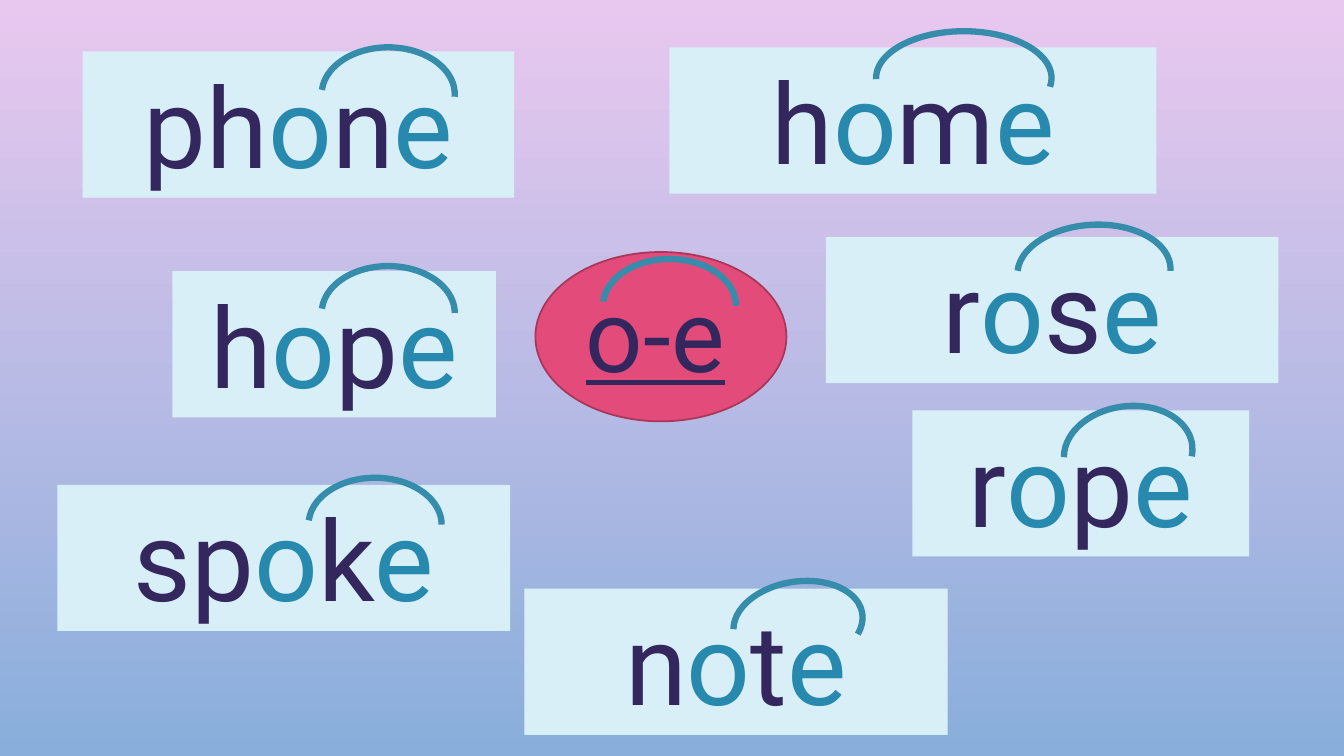
from itertools import groupby

from pptx import Presentation
from pptx.dml.color import RGBColor
from pptx.enum.shapes import MSO_SHAPE as Preset
from pptx.enum.text import MSO_ANCHOR as Anchor, MSO_AUTO_SIZE as AutoSize, PP_ALIGN as Align
from pptx.util import Inches, Pt

COLORS = {
    "sky_top": "E9C8EF",
    "sky_bottom": "89AEDB",
    "card": "D9EFF7",
    "consonant": "33275E",
    "vowel": "2689AD",
    "arc": "368CAB",
    "oval": "E34B7A",
    "oval_edge": "A8375A",
}
VOWELS = "oe"
CARD_HEIGHT = 1.45
ARC_START = 110.225

WORDS = [
    ("phone", (0.82, 0.51, 4.28), (3.19, 0.47, 1.32, 0.93), {"end": 1.314}),
    ("hope", (1.71, 2.69, 3.21), (3.19, 2.64, 1.32, 0.93), {}),
    ("spoke", (0.57, 4.81, 4.49), (3.06, 4.74, 1.32, 0.93), {}),
    ("home", (6.64, 0.47, 4.83), (8.69, 0.31, 1.74, 0.93), {"start": 107.559, "end": 3.482}),
    ("rose", (8.19, 2.35, 4.49), (10.09, 2.23, 1.52, 0.93), {"end": 1.579, "turn": -3.1}),
    ("rope", (9.05, 4.07, 3.34), (10.55, 4.03, 1.28, 0.93), {"end": 6.205, "turn": -7.4}),
    ("note", (5.2, 5.84, 4.2), (7.27, 5.77, 1.29, 0.83), {"end": 11.39, "turn": -8.8}),
]


def color(name):
    return RGBColor.from_string(COLORS[name])


def add_run(paragraph, text, size=80, fill="consonant", underline=None):
    run = paragraph.add_run()
    run.text = text
    run.font.name = "Roboto"
    run.font.size = Pt(size)
    run.font.color.rgb = color(fill)
    run.font.underline = underline


class SoundSlide:
    def __init__(self, deck):
        self.slide = deck.slides.add_slide(deck.slide_layouts[5])
        self.shapes = self.slide.shapes

    def background(self, top, bottom):
        fill = self.slide.background.fill
        fill.gradient()
        fill.gradient_angle = 270
        for stop, name, position in zip(fill.gradient_stops, (top, bottom), (0, 1)):
            stop.color.rgb = color(name)
            stop.position = position

    def preset(self, shapes, kind, box, line, width):
        shape = shapes.add_shape(kind, *map(Inches, box))
        shape.shadow.inherit = False
        shape.line.color.rgb = color(line)
        shape.line.width = Pt(width)
        return shape

    def oval(self, box):
        oval = self.preset(self.shapes, Preset.OVAL, box, "oval_edge", 1.25)
        oval.fill.solid()
        oval.fill.fore_color.rgb = color("oval")

    def arc(self, shapes, box, start=ARC_START, end=0, turn=0):
        arc = self.preset(shapes, Preset.ARC, box, "arc", 4.5)
        arc.fill.background()
        arc.adjustments[0] = start
        arc.adjustments[1] = end
        arc.rotation = turn

    def frame(self, holder):
        frame = holder.text_frame
        frame.word_wrap = True
        frame.auto_size = AutoSize.SHAPE_TO_FIT_TEXT
        frame.vertical_anchor = Anchor.TOP
        paragraph = frame.paragraphs[0]
        paragraph.alignment = Align.CENTER
        return paragraph

    def title(self, text, box):
        title = self.shapes.title
        title.left, title.top, title.width, title.height = map(Inches, box)
        add_run(self.frame(title), text, size=72, underline=True)
        self.shapes._spTree.append(title._element)

    def word(self, text, place, arc_box, arc_format):
        group = self.shapes.add_group_shape().shapes
        card = group.add_textbox(*map(Inches, (*place, CARD_HEIGHT)))
        card.fill.solid()
        card.fill.fore_color.rgb = color("card")
        paragraph = self.frame(card)
        for is_vowel, letters in groupby(text, lambda letter: letter in VOWELS):
            add_run(paragraph, "".join(letters), fill="vowel" if is_vowel else "consonant")
        self.arc(group, arc_box, **arc_format)


def main():
    deck = Presentation()
    deck.slide_width, deck.slide_height = Inches(13.33), Inches(7.5)
    sound = SoundSlide(deck)
    sound.background("sky_top", "sky_bottom")
    sound.oval((5.31, 2.5, 2.49, 1.68))
    sound.title("o-e", (5.31, 2.65, 2.38, 1.31))
    sound.arc(sound.shapes, (5.98, 2.57, 1.32, 0.93))
    for word in WORDS:
        sound.word(*word)
    deck.save("out.pptx")


if __name__ == "__main__":
    main()
